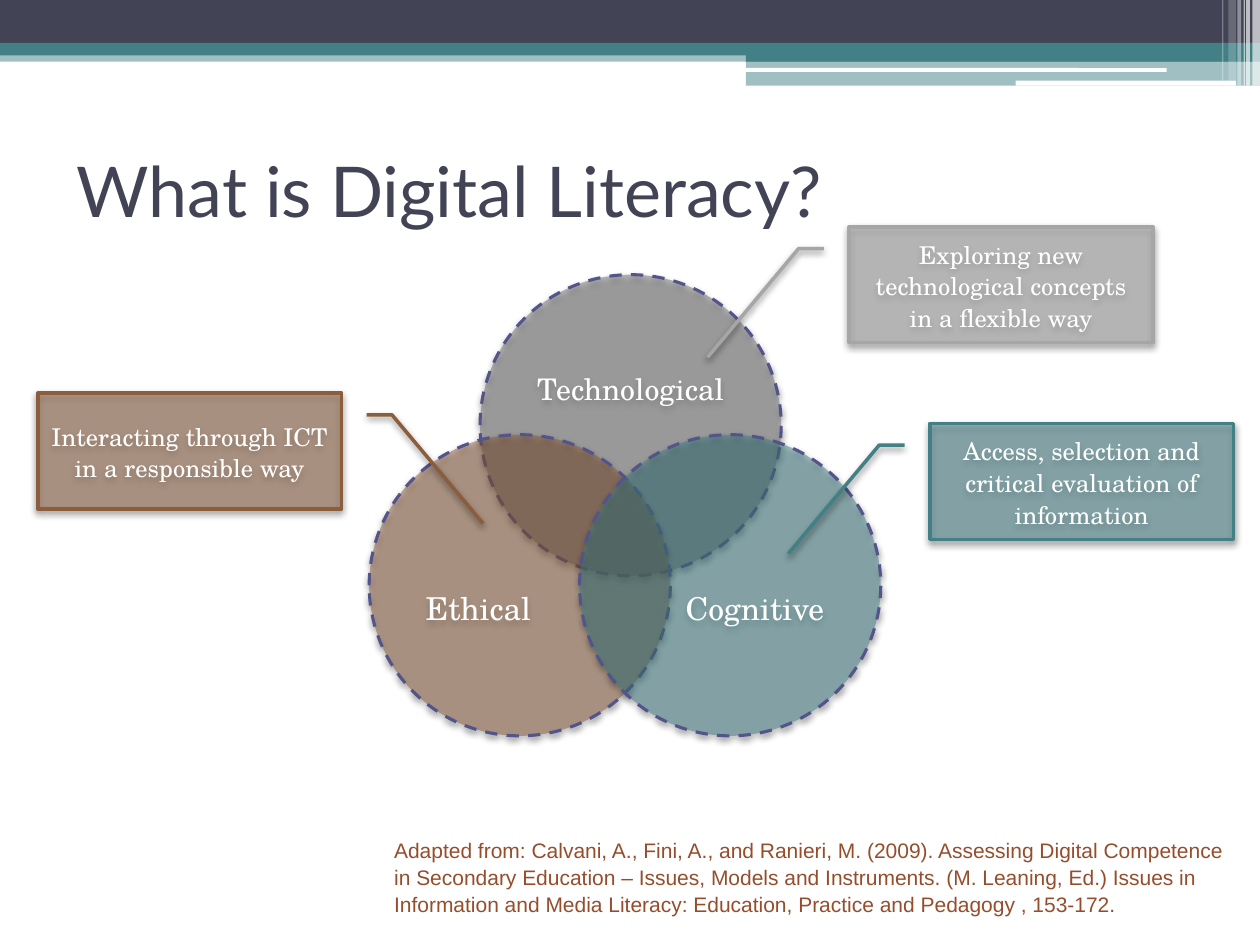
from dataclasses import dataclass

import lxml.etree
import pptx
import pptx.dml.color
import pptx.enum.dml
import pptx.enum.shapes
import pptx.enum.text
import pptx.oxml.ns
import pptx.util

SHAPE = pptx.enum.shapes.MSO_SHAPE
ALIGN = pptx.enum.text.PP_ALIGN
MIDDLE = pptx.enum.text.MSO_ANCHOR.MIDDLE
CELL = pptx.util.Inches(0.1)  # the slide is a grid of 100 columns and 75 rows
COLUMNS, ROWS = 100, 75

WHITE, NAVY, TEAL, BROWN = "FFFFFF", "424456", "438086", "8B5D3D"
GRAY, SILVER, OUTLINE, RUST = "6F6F6F", "A6A6A6", "53548A", "964D2C"
SERIF = "TeX Gyre Schola"
CIRCLE_SIZE = 23.9
CALLOUT_WIDTH, CALLOUT_HEIGHT = 24.1, 9.2


@dataclass
class Band:
    left: float
    top: float
    width: float
    height: float
    color: str
    opacity: int = 100
    kind: int = SHAPE.RECTANGLE


@dataclass
class Circle:
    """A set of the Venn diagram; offsets push its label off the centre."""
    label: str
    left: float
    top: float
    color: str
    size: int
    alignment: int
    top_offset: float = 0
    bottom_offset: float = 0


@dataclass
class Callout:
    text: str
    left: float
    top: float
    color: str
    mirrored: bool = False


BANDS = [
    Band(0, 4, COLUMNS, 0.9, TEAL, 50),
    Band(0, 0, COLUMNS, 3.4, NAVY),
    Band(0, 3.4, COLUMNS, 1, TEAL),
    Band(59.2, 3.9, 40.8, 1, TEAL),
    Band(59.2, 4.8, 40.8, 2, TEAL, 50),
    Band(59.1, 5.4, 33.5, 0.3, WHITE, kind=SHAPE.ROUNDED_RECTANGLE),
    Band(80.6, 6.4, 17.5, 0.4, WHITE, kind=SHAPE.ROUNDED_RECTANGLE),
]
STRIPES = [  # left, width, height, opacity
    (99.4, 0.6, 6.8, 65), (98.9, 0.3, 6.8, 65), (98.7, 0.1, 6.8, 60),
    (98.2, 0.3, 6.8, 40), (97.5, 0.6, 6.4, 20), (97, 0.1, 6.4, 30),
]
BANDS += [Band(left, 0, width, height, WHITE, opacity)
          for left, width, height, opacity in STRIPES]

CIRCLES = [
    Circle("Technological", 38.1, 21.8, GRAY, 17, ALIGN.CENTER, bottom_offset=6),
    Circle("Ethical", 29.3, 34.5, BROWN, 18, ALIGN.LEFT, top_offset=3.4),
    Circle("Cognitive", 46, 34.5, TEAL, 18, ALIGN.RIGHT, top_offset=3.4),
]
CALLOUTS = [
    Callout("Exploring new technological concepts in a flexible way", 67.4, 18, SILVER),
    Callout("Access, selection and critical evaluation of information", 73.8, 33.6, TEAL),
    Callout("Interacting through ICT in a responsible way", 3, 31.2, BROWN, True),
]
CITATION = (
    "Adapted from: Calvani, A., Fini, A., and Ranieri, M. (2009). Assessing Digital "
    "Competence in Secondary Education – Issues, Models and Instruments. (M. Leaning, "
    "Ed.) Issues in Information and Media Literacy: Education, Practice and Pedagogy "
    ", 153-172."
)


def grid(*cells: float) -> list[int]:
    return [round(cell * CELL) for cell in cells]


def rgb(color: str) -> pptx.dml.color.RGBColor:
    return pptx.dml.color.RGBColor.from_string(color)


def set_all(target, values: dict) -> None:
    for name, value in values.items():
        setattr(target, name, value)


def add_child(parent, tag: str, **attributes):
    return lxml.etree.SubElement(parent, pptx.oxml.ns.qn(tag), attributes)


def add_filled(slide, kind: int, box: list[int], color: str, opacity: int):
    shape = slide.shapes.add_shape(kind, *box)
    shape.shadow.inherit = False
    shape.fill.solid()
    shape.fill.fore_color.rgb = rgb(color)
    shape.line.fill.background()
    if opacity < 100:
        tint = shape.element.spPr.find(".//" + pptx.oxml.ns.qn("a:srgbClr"))
        add_child(tint, "a:alpha", val=str(opacity * 1000))
    return shape


def add_outline_and_shadow(shape, color: str, width: float) -> None:
    shape.line.color.rgb = rgb(color)
    shape.line.width = pptx.util.Pt(width)
    effects = shape.element.spPr.find(pptx.oxml.ns.qn("a:effectLst"))
    shadow = add_child(effects, "a:outerShdw", blurRad=str(pptx.util.Pt(4)),
                       dist=str(pptx.util.Pt(2)), dir="5400000", rotWithShape="0")
    black = add_child(shadow, "a:srgbClr", val="000000")
    add_child(black, "a:alpha", val="45000")


def write(shape, text: str, size: int, font: str, color: str, alignment: int,
          spacing: float = 1.08, **frame_format) -> None:
    set_all(shape.text_frame, {"word_wrap": True, **frame_format})
    paragraph = shape.text_frame.paragraphs[0]
    set_all(paragraph, {"alignment": alignment, "line_spacing": spacing})
    run = paragraph.add_run()
    run.text = text
    set_all(run.font, {"size": pptx.util.Pt(size), "name": font})
    run.font.color.rgb = rgb(color)


def draw_band(slide, band: Band) -> None:
    box = grid(band.left, band.top, band.width, band.height)
    add_filled(slide, band.kind, box, band.color, band.opacity)


def draw_circle(slide, circle: Circle) -> None:
    box = grid(circle.left, circle.top, CIRCLE_SIZE, CIRCLE_SIZE)
    shape = add_filled(slide, SHAPE.OVAL, box, circle.color, 50)
    add_outline_and_shadow(shape, OUTLINE, 1.75)
    shape.line.dash_style = pptx.enum.dml.MSO_LINE.DASH
    side, top, bottom = grid(0.5 if circle.alignment == ALIGN.CENTER else 1,
                             0.5 + circle.top_offset, 0.5 + circle.bottom_offset)
    write(shape, circle.label, circle.size, SERIF, WHITE, circle.alignment,
          vertical_anchor=MIDDLE, margin_left=side, margin_right=side,
          margin_top=top, margin_bottom=bottom)


def draw_callout(slide, callout: Callout) -> None:
    box = grid(callout.left, callout.top, CALLOUT_WIDTH, CALLOUT_HEIGHT)
    shape = add_filled(slide, SHAPE.LINE_CALLOUT_2, box, callout.color, 50)
    add_outline_and_shadow(shape, callout.color, 2)
    if callout.mirrored:
        shape.element.spPr.xfrm.set("flipH", "1")
    write(shape, callout.text, 14, SERIF, WHITE, ALIGN.CENTER, vertical_anchor=MIDDLE)


def main() -> None:
    presentation = pptx.Presentation()
    set_all(presentation, {"slide_width": COLUMNS * CELL, "slide_height": ROWS * CELL})
    slide = presentation.slides.add_slide(presentation.slide_layouts[5])
    for band in BANDS:
        draw_band(slide, band)

    title = slide.shapes.title
    set_all(title, dict(zip(("left", "top", "width", "height"),
                            grid(5.1, 9.2, 90, 11.7))))
    write(title, "What is Digital Literacy?", 40, "Lato", NAVY, ALIGN.LEFT, 1.0,
          vertical_anchor=MIDDLE)
    citation = slide.shapes.add_textbox(*grid(30.3, 65.8, 69, 7.5))
    write(citation, CITATION, 12, "Arial", RUST, ALIGN.LEFT)

    for circle in CIRCLES:
        draw_circle(slide, circle)
    for callout in CALLOUTS:
        draw_callout(slide, callout)
    presentation.save("out.pptx")


if __name__ == "__main__":
    main()
